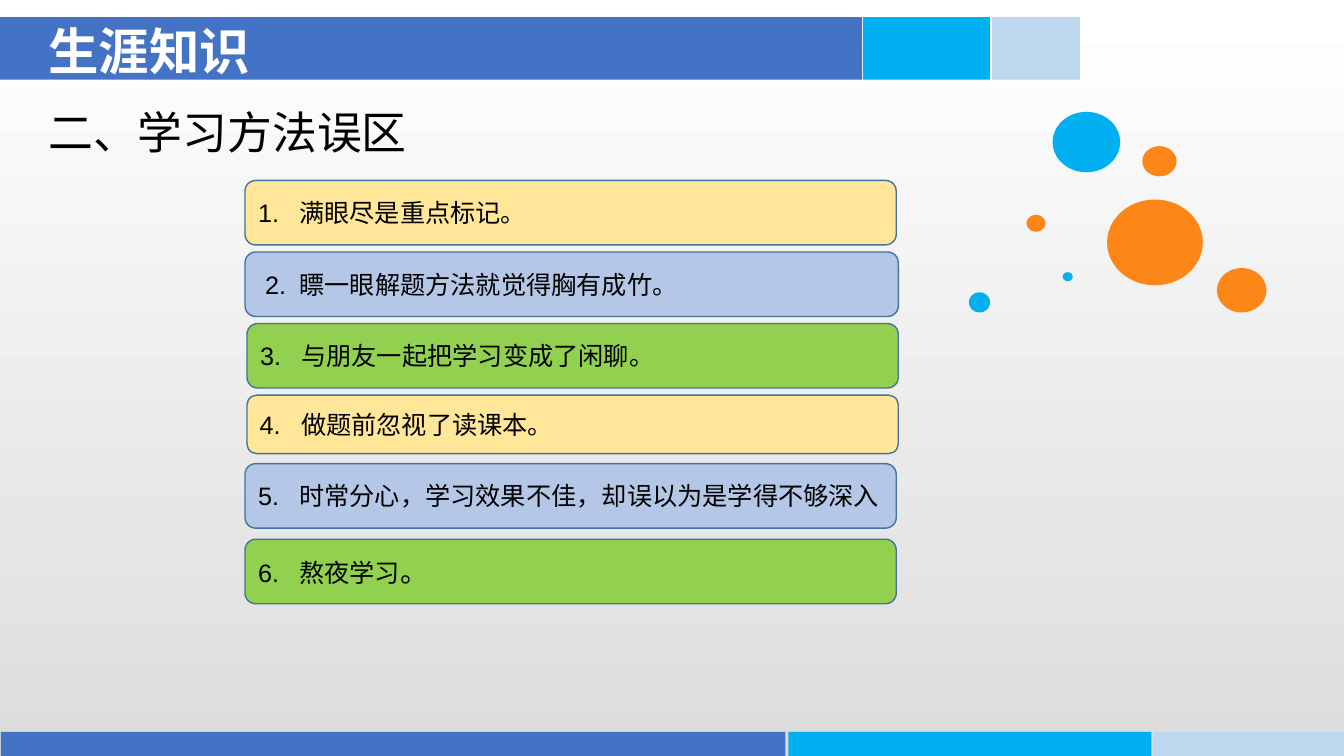
from pptx import Presentation
from pptx.dml.color import RGBColor
from pptx.enum.shapes import MSO_SHAPE
from pptx.enum.text import MSO_ANCHOR, PP_ALIGN
from pptx.oxml.ns import qn
from pptx.util import Inches, Pt
from lxml import etree

RECT = MSO_SHAPE.RECTANGLE
OVAL = MSO_SHAPE.OVAL
ROUND = MSO_SHAPE.ROUNDED_RECTANGLE
MIDDLE = MSO_ANCHOR.MIDDLE
TOP = MSO_ANCHOR.TOP
LEFT = PP_ALIGN.LEFT

CELL = Inches(0.1)
HANG = 4.1
LATIN = "Arial"
HAN = "Noto Sans CJK SC"
HEX = {
    "blue": "4472C4", "sky": "00B0F0", "pale": "BDD7EE", "orange": "FC8618",
    "cream": "FFE699", "haze": "B4C7E7", "green": "92D050", "edge": "43739E",
    "white": "FFFFFF", "gray": "DCDCDC", "black": "000000",
}


def tint(name):
    return RGBColor.from_string(HEX[name])


def write(para, text, size=18, color="black", bold=False, font=LATIN):
    run = para.add_run()
    run.text = text
    run.font.size = Pt(size)
    run.font.bold = bold
    run.font.color.rgb = tint(color)
    run.font.name = font
    props = run._r.get_or_add_rPr()
    etree.SubElement(props, qn("a:ea")).set("typeface", HAN)


class Deck:
    def __init__(self):
        self.show = Presentation()
        self.show.slide_width = Inches(13.33)
        self.show.slide_height = Inches(7.5)
        self.slide = self.show.slides.add_slide(self.show.slide_layouts[6])

    def grid(self, *cells):
        return [round(cell * CELL) for cell in cells]

    def fade(self, first, last):
        fill = self.slide.background.fill
        fill.gradient()
        fill.gradient_angle = 270
        for stop, name, spot in zip(fill.gradient_stops, (first, last), (0, 1)):
            stop.color.rgb = tint(name)
            stop.position = spot

    def shape(self, kind, box, fill, edge=None):
        shape = self.slide.shapes.add_shape(kind, *self.grid(*box))
        shape.shadow.inherit = False
        shape.fill.solid()
        shape.fill.fore_color.rgb = tint(fill)
        if edge:
            shape.line.color.rgb = tint(edge)
            shape.line.width = Pt(1)
        else:
            shape.line.fill.background()
        return shape

    def label(self, box, text, anchor=TOP, **style):
        frame = self.slide.shapes.add_textbox(*self.grid(*box)).text_frame
        frame.word_wrap = True
        frame.vertical_anchor = anchor
        write(frame.paragraphs[0], text, **style)

    def item(self, box, fill, mark, text, shift=0, end=18):
        frame = self.shape(ROUND, box, fill, "edge").text_frame
        frame.word_wrap = True
        frame.vertical_anchor = MIDDLE
        frame.margin_right = 0
        para = frame.paragraphs[0]
        para.alignment = LEFT
        left, back = self.grid(HANG, shift - HANG)
        props = para._p.get_or_add_pPr()
        props.set("marL", str(left))
        props.set("indent", str(back))
        tabs = etree.SubElement(props, qn("a:tabLst"))
        tab = etree.SubElement(tabs, qn("a:tab"))
        tab.set("pos", str(left))
        tab.set("algn", "l")
        write(para, f"{mark}.\t{text[:-1]}")
        write(para, text[-1], size=end)

    def save(self):
        self.show.save("out.pptx")


BANDS = [
    (1.7, 6.2, [(0, 85.5), (85.6, 12.6), (98.4, 8.7)]),
    (72.6, 2.4, [(0.1, 77.8), (78.2, 36), (114.4, 18.9)]),
]
DOTS = [
    (96.1, 29, 2.1, 2, "sky"),
    (109.8, 19.8, 9.5, 8.5, "orange"),
    (104.4, 11.1, 6.7, 6, "sky"),
    (120.7, 26.6, 4.9, 4.4, "orange"),
    (113.3, 14.5, 3.4, 3, "orange"),
    (101.8, 21.3, 1.9, 1.7, "orange"),
    (105.4, 27, 1, 0.9, "sky"),
]
ITEMS = [
    (24.3, 17.9, 64.6, 6.4, "满眼尽是重点标记。", {}),
    (24.3, 25, 64.8, 6.4, "瞟一眼解题方法就觉得胸有成竹。", {"shift": 0.7}),
    (24.5, 32.1, 64.6, 6.4, "与朋友一起把学习变成了闲聊。", {}),
    (24.5, 39.2, 64.6, 5.8, "做题前忽视了读课本。", {}),
    (24.3, 46, 64.6, 6.4, "时常分心，学习效果不佳，却误以为是学得不够深入", {}),
    (24.3, 53.5, 64.6, 6.4, "熬夜学习。", {"end": 20}),
]


def main():
    deck = Deck()
    deck.fade("white", "gray")
    for top, tall, parts in BANDS:
        for (left, wide), fill in zip(parts, ("blue", "sky", "pale")):
            deck.shape(RECT, (left, top, wide, tall), fill)
    for *box, fill in DOTS:
        deck.shape(OVAL, box, fill)
    deck.label((3.8, 2.4, 38.8, 5.1), "生涯知识", MIDDLE,
               size=36, color="white", bold=True, font=HAN)
    deck.label((3.8, 9.9, 66, 6.4), "二、学习方法误区", size=32)
    fills = ("cream", "haze", "green")
    for index, (*box, text, style) in enumerate(ITEMS):
        deck.item(box, fills[index % 3], index + 1, text, **style)
    deck.save()


if __name__ == "__main__":
    main()
